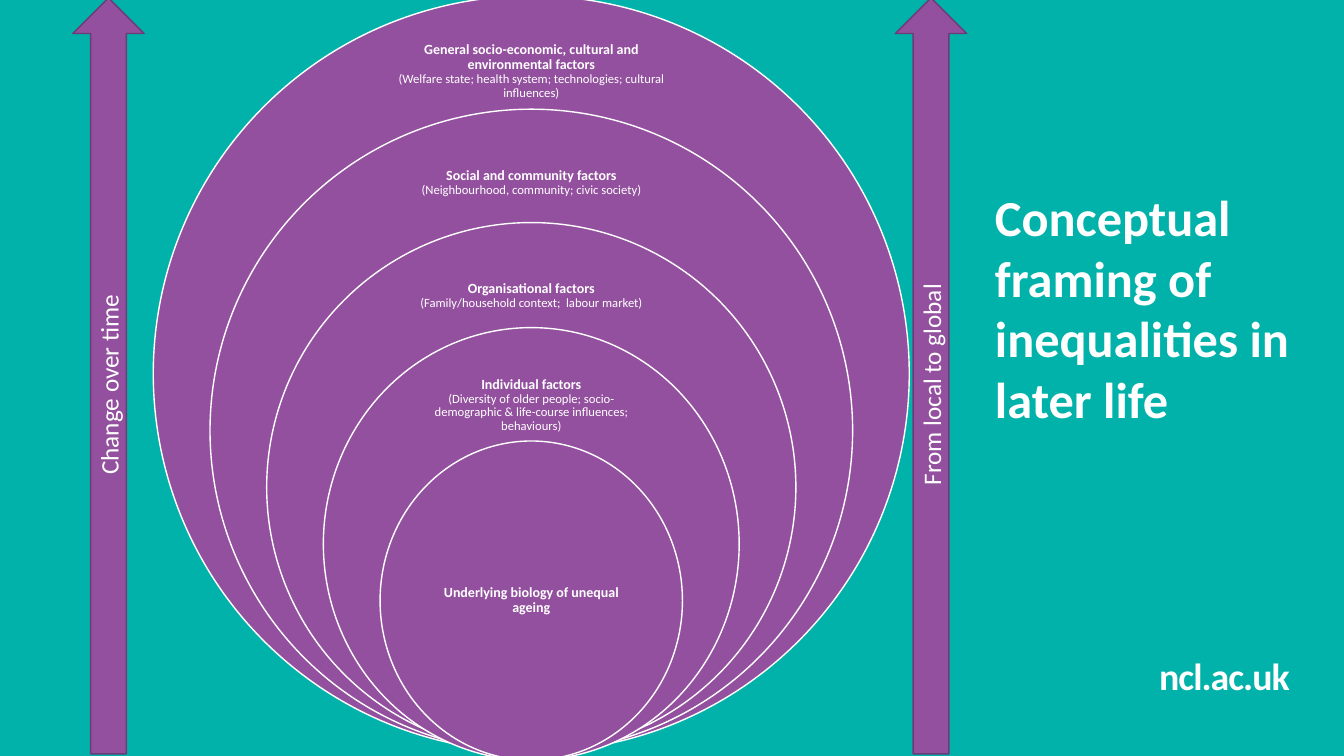
import pptx
import pptx.util
import pptx.dml.color
import pptx.enum.shapes
import pptx.enum.text

Pt = pptx.util.Pt
RGBColor = pptx.dml.color.RGBColor
MSO_SHAPE = pptx.enum.shapes.MSO_SHAPE
PP_ALIGN = pptx.enum.text.PP_ALIGN
MSO_ANCHOR = pptx.enum.text.MSO_ANCHOR

# Content
TITLE = "Conceptual framing of inequalities in later life"
WEB_ADDRESS = "ncl.ac.uk"

# Outermost first: heading, detail, label width, label top, label height
LAYERS = [
    ("General socio-economic, cultural and environmental factors",
     "(Welfare state; health system; technologies; cultural influences)", 202, 24, 54),
    ("Social and community factors",
     "(Neighbourhood, community; civic society)", 198, 104, 53),
    ("Organisational factors",
     "(Family/household context;  labour market)", 196, 185, 52),
    ("Individual factors",
     "(Diversity of older people; socio-demographic & life-course influences; behaviours)",
     161, 262, 55),
    ("Underlying biology of unequal ageing", None, 152, 372, 114),
]
# Arrow caption and left edge
ARROWS = [("Change over time", 52), ("From local to global", 639.5)]

# Format
FONT = "Calibri"
TEAL = RGBColor(0x00, 0xB2, 0xA9)
PURPLE = RGBColor(0x93, 0x50, 0x9E)
DARK_PURPLE = RGBColor(0x6D, 0x3B, 0x75)
WHITE = RGBColor(0xFF, 0xFF, 0xFF)

# Geometry in points
CIRCLE_CENTRE = 379.5
CIRCLE_TOP = -3
CIRCLE_SIZE = 540
CIRCLE_STEP = 81
STRETCHED_FROM = 3  # the two inner circles are slightly taller than wide
STRETCH = 12


def write_text(shape, *lines, align=PP_ALIGN.LEFT, anchor=MSO_ANCHOR.TOP,
               insets=(7.2, 3.6), line_spacing=1.0):
    """Fill a shape with lines given as (text, size, bold)."""
    frame = shape.text_frame
    frame.word_wrap = True
    frame.auto_size = pptx.enum.text.MSO_AUTO_SIZE.NONE
    frame.vertical_anchor = anchor
    frame.margin_left = frame.margin_right = Pt(insets[0])
    frame.margin_top = frame.margin_bottom = Pt(insets[1])
    for index, (text, size, bold) in enumerate(lines):
        paragraph = frame.add_paragraph() if index else frame.paragraphs[0]
        paragraph.alignment = align
        paragraph.line_spacing = line_spacing
        run = paragraph.add_run()
        run.text = text
        run.font.name = FONT
        run.font.size = Pt(size)
        run.font.bold = bold
        run.font.color.rgb = WHITE


def add_figure(slide, kind, box, line_color):
    shape = slide.shapes.add_shape(kind, *map(Pt, box))
    shape.shadow.inherit = False
    shape.fill.solid()
    shape.fill.fore_color.rgb = PURPLE
    shape.line.color.rgb = line_color
    shape.line.width = Pt(1)
    return shape


def main():
    presentation = pptx.Presentation()
    presentation.slide_width, presentation.slide_height = Pt(960), Pt(540)
    slide = presentation.slides.add_slide(presentation.slide_layouts[5])
    slide.background.fill.solid()
    slide.background.fill.fore_color.rgb = TEAL

    # Title
    title = slide.shapes.title
    title.left, title.top, title.width, title.height = map(Pt, (703.5, 129.5, 256.5, 181.5))
    write_text(title, (TITLE, 36, True))

    # Web address
    address = slide.shapes.add_textbox(Pt(828), Pt(466.5), Pt(119.5), Pt(25))
    write_text(address, (WEB_ADDRESS, 27, True), insets=(0, 0))
    address.text_frame.paragraphs[0].runs[0].font._element.set("spc", "-70")

    # Nested circles with their labels
    for index, (heading, detail, width, top, height) in enumerate(LAYERS):
        size = CIRCLE_SIZE - index * CIRCLE_STEP
        stretch = STRETCH if index >= STRETCHED_FROM else 0
        add_figure(slide, MSO_SHAPE.OVAL,
                   (CIRCLE_CENTRE - size / 2, CIRCLE_TOP + index * CIRCLE_STEP - stretch / 2,
                    size, size + stretch), WHITE)
        label = slide.shapes.add_textbox(Pt(CIRCLE_CENTRE - width / 2), Pt(top),
                                         Pt(width), Pt(height))
        lines = [(heading, 10, True)]
        if detail:
            lines.append((detail, 9, False))
        write_text(label, *lines, align=PP_ALIGN.CENTER, anchor=MSO_ANCHOR.MIDDLE,
                   insets=(5.76, 5.76), line_spacing=0.9)

    # Upward arrows with vertical captions
    for caption, left in ARROWS:
        arrow = add_figure(slide, MSO_SHAPE.UP_ARROW, (left, -1.5, 51, 540), DARK_PURPLE)
        write_text(arrow, (caption, 18, False), align=PP_ALIGN.CENTER,
                   anchor=MSO_ANCHOR.MIDDLE)
        arrow.text_frame._txBody.bodyPr.set("vert", "vert270")

    presentation.save("out.pptx")


if __name__ == "__main__":
    main()
